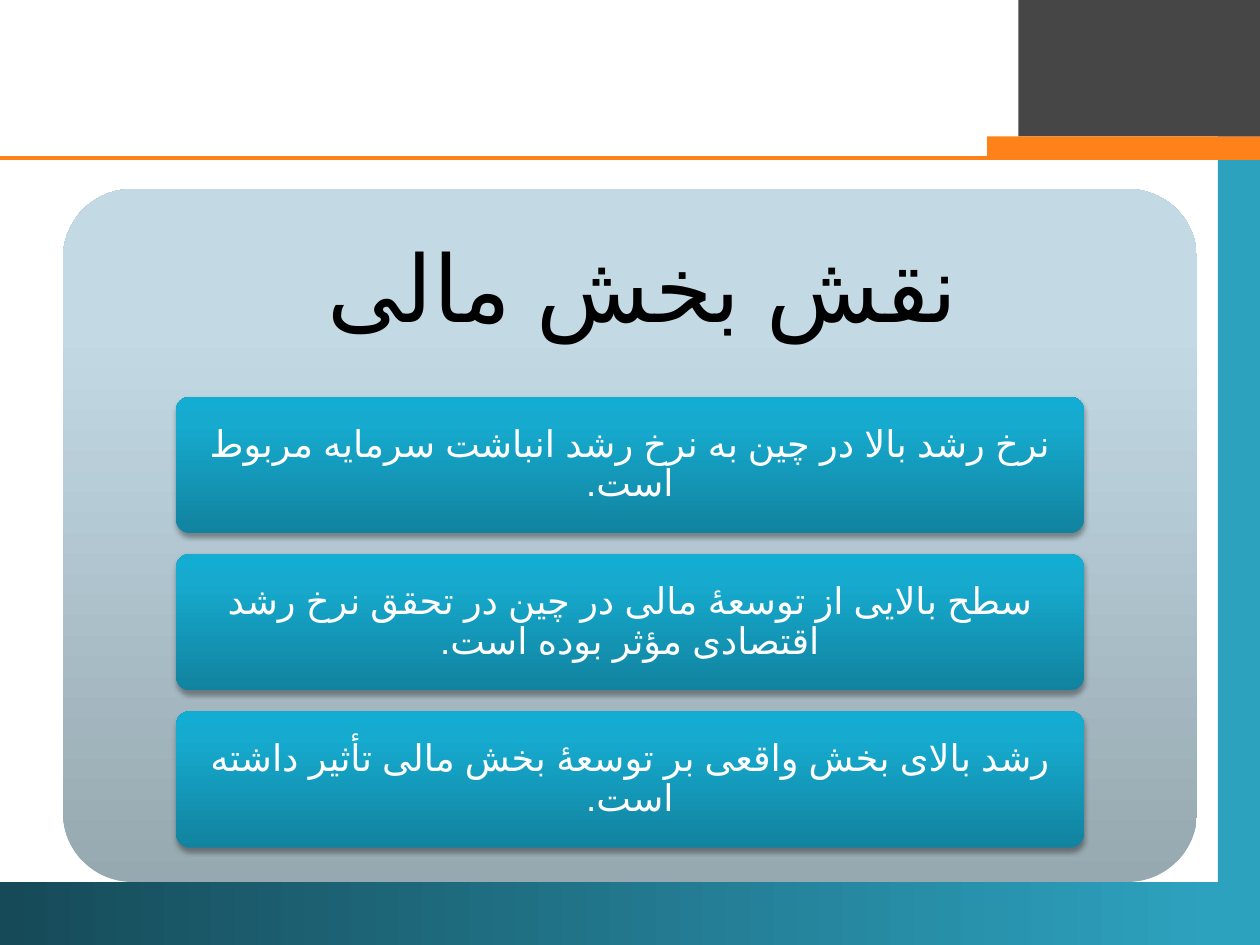
from dataclasses import dataclass

from lxml import etree
from pptx import Presentation
from pptx import util as u
from pptx.dml.color import RGBColor
from pptx.enum import lang, shapes, text
from pptx.oxml import ns

BLACK = RGBColor(0x00, 0x00, 0x00)
WHITE = RGBColor(0xFF, 0xFF, 0xFF)
TEAL = RGBColor(0x2D, 0xA2, 0xBF)
DARK_TEAL = RGBColor(0x16, 0x4A, 0x58)
GRAY = RGBColor(0x46, 0x46, 0x46)
ORANGE = RGBColor(0xFF, 0x81, 0x19)
PANEL_LOW = RGBColor(0x96, 0xA8, 0xB0)
PANEL_MID = RGBColor(0xC3, 0xDA, 0xE5)
PANEL_HIGH = RGBColor(0xC3, 0xDC, 0xE7)
CARD_LOW = RGBColor(0x11, 0x83, 0x9F)
CARD_MID = RGBColor(0x16, 0xAA, 0xCE)
CARD_HIGH = RGBColor(0x13, 0xAD, 0xD3)

RIGHTWARD, UPWARD = 0, 270
FONT = "Arial"
WIDTH, HEIGHT = 25.4, 19.05


@dataclass(frozen=True)
class Frame:
    """A place on the page, in centimetres."""
    left: float
    top: float
    width: float
    height: float

    def lengths(self) -> list:
        return [u.Cm(v) for v in (self.left, self.top, self.width, self.height)]


@dataclass(frozen=True)
class Gradient:
    angle: int
    stops: tuple


@dataclass(frozen=True)
class Block:
    frame: Frame
    fill: object
    rounded: bool = False


@dataclass(frozen=True)
class Caption:
    words: str
    size: float
    color: RGBColor
    inset_x: float
    inset_y: float


def add_node(parent, tag: str, **attributes):
    node = etree.SubElement(parent, ns.qn(tag))
    for name, value in attributes.items():
        node.set(name, str(value))
    return node


def paint_gradient(box, gradient: Gradient) -> None:
    fill = etree.Element(ns.qn("a:gradFill"), rotWithShape="1")
    stops = add_node(fill, "a:gsLst")
    for percent, color in gradient.stops:
        stop = add_node(stops, "a:gs", pos=percent * 1000)
        add_node(stop, "a:srgbClr", val=color)
    add_node(fill, "a:lin", ang=gradient.angle * 60000, scaled=0)
    box._element.spPr.find(ns.qn("a:prstGeom")).addnext(fill)


def draw_block(page, block: Block):
    kind = shapes.MSO_SHAPE.ROUNDED_RECTANGLE if block.rounded else shapes.MSO_SHAPE.RECTANGLE
    box = page.shapes.add_shape(kind, *block.frame.lengths())
    box.shadow.inherit = False
    box.line.fill.background()
    if block.rounded:
        box.adjustments[0] = 0.1
    if isinstance(block.fill, Gradient):
        paint_gradient(box, block.fill)
    else:
        box.fill.solid()
        box.fill.fore_color.rgb = block.fill
    return box


def cast_shadow(box) -> None:
    effects = box._element.spPr.find(ns.qn("a:effectLst"))
    shadow = add_node(effects, "a:outerShdw", blurRad=u.Pt(3.1), dist=u.Pt(1.8),
                      dir=90 * 60000, rotWithShape=0)
    color = add_node(shadow, "a:srgbClr", val=BLACK)
    add_node(color, "a:alpha", val=35000)


def write_caption(box, caption: Caption) -> None:
    frame = box.text_frame
    layout = {
        "word_wrap": True,
        "vertical_anchor": text.MSO_ANCHOR.MIDDLE,
        "margin_left": u.Cm(caption.inset_x),
        "margin_right": u.Cm(caption.inset_x),
        "margin_top": u.Cm(caption.inset_y),
        "margin_bottom": u.Cm(caption.inset_y),
    }
    for name, value in layout.items():
        setattr(frame, name, value)

    para = frame.paragraphs[0]
    para.alignment = text.PP_ALIGN.CENTER
    para.line_spacing = 0.9
    para._p.get_or_add_pPr().set("rtl", "1")

    span = para.add_run()
    span.text = caption.words
    style = {"size": u.Pt(caption.size), "name": FONT,
             "language_id": lang.MSO_LANGUAGE_ID.FARSI}
    for name, value in style.items():
        setattr(span.font, name, value)
    span.font.color.rgb = caption.color
    # Right-to-left script takes its own font
    add_node(span._r.get_or_add_rPr(), "a:cs", typeface=FONT)


def draw_rule(page, y: float, color: RGBColor, weight: float) -> None:
    rule = page.shapes.add_connector(shapes.MSO_CONNECTOR.STRAIGHT,
                                     u.Cm(WIDTH), u.Cm(y), u.Cm(0), u.Cm(y))
    rule.line.color.rgb = color
    rule.line.width = u.Pt(weight)
    add_node(rule._element.spPr, "a:effectLst")


# Page decoration
SIDE_BAR = Block(Frame(24.55, 0.64, 0.85, 18.41), TEAL)
BOTTOM_BAR = Block(Frame(0, 17.78, 24.56, 1.27),
                   Gradient(RIGHTWARD, ((0, DARK_TEAL), (100, TEAL))))
CORNER = Block(Frame(20.53, 0, 4.87, 2.75), GRAY)
CORNER_BASE = Block(Frame(19.9, 2.75, 5.5, 0.42), ORANGE)

# Panel, heading and cards
PANEL = Block(Frame(1.27, 3.81, 22.86, 13.97),
              Gradient(UPWARD, ((0, PANEL_LOW), (80, PANEL_MID), (100, PANEL_HIGH))), True)
HEADING_FRAME = Frame(1.27, 3.81, 22.86, 4.19)
HEADING = Caption("نقش بخش مالی ", 53, BLACK, 0.56, 0.56)
CARD_FILL = Gradient(UPWARD, ((0, CARD_LOW), (80, CARD_MID), (100, CARD_HIGH)))
CARD_TOP, CARD_HEIGHT, CARD_GAP = 8.0, 2.75, 0.42
CARD_TEXTS = (
    "نرخ رشد بالا در چین به نرخ رشد انباشت سرمایه مربوط است.",
    "سطح بالایی از توسعۀ مالی در چین در تحقق نرخ رشد اقتصادی مؤثر بوده است.",
    "رشد بالای بخش واقعی بر توسعۀ بخش مالی تأثیر داشته است.",
)


def main() -> None:
    deck = Presentation()
    deck.slide_width, deck.slide_height = u.Cm(WIDTH), u.Cm(HEIGHT)
    page = deck.slides.add_slide(deck.slide_layouts[6])

    # Decoration, back to front
    for block in (SIDE_BAR, BOTTOM_BAR, CORNER):
        draw_block(page, block)
    draw_rule(page, 3.18, ORANGE, 2.25)
    draw_block(page, CORNER_BASE)

    # Panel with its heading
    draw_block(page, PANEL)
    write_caption(page.shapes.add_textbox(*HEADING_FRAME.lengths()), HEADING)

    # Cards, evenly stacked
    for row, words in enumerate(CARD_TEXTS):
        top = CARD_TOP + row * (CARD_HEIGHT + CARD_GAP)
        card = draw_block(page, Block(Frame(3.55, top, 18.3, CARD_HEIGHT), CARD_FILL, True))
        cast_shadow(card)
        write_caption(card, Caption(words, 21, WHITE, 0.15, 0.1))

    deck.save("out.pptx")


if __name__ == "__main__":
    main()
